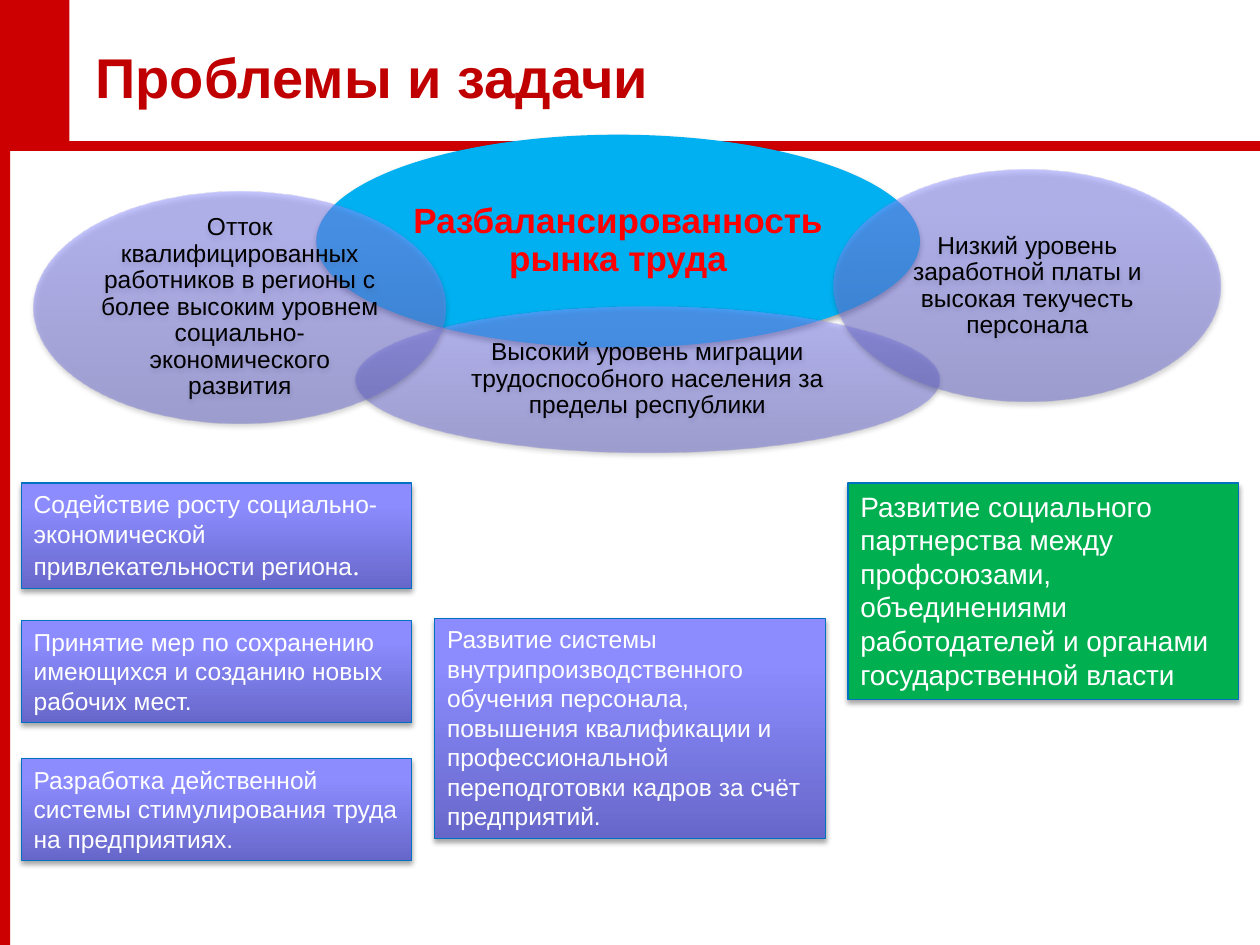
from lxml import etree
from pptx import Presentation
from pptx.dml.color import RGBColor
from pptx.enum import shapes, text
from pptx.oxml.ns import qn
from pptx.util import Pt

COLORS = {"frame": "CC0000", "title": "C00000", "blue": "00B0F0", "green": "00B050",
          "border": "0070C0", "alert": "FF0000", "dark": "000000", "light": "FFFFFF"}
VIOLET = [(0, "6767CA"), (80, "8C8CFF"), (100, "8E8EFF")]
FONT = "Arial"
TITLE = "Проблемы и задачи"

# Problems: text, (left, top, width, height), fill (None = violet), text colour, size, inset
PROBLEMS = [
    ("Разбалансированность рынка труда",
     (180.7, 77, 345, 121.7), "blue", "alert", 20, 2),
    ("Высокий уровень миграции трудоспособного населения за пределы республики",
     (203, 175, 334, 83.5), None, "dark", 14, 1.4),
    ("Низкий уровень заработной платы и высокая текучесть персонала",
     (476.6, 97.2, 221, 132.5), None, "dark", 14, 1.4),
    ("Отток квалифицированных работников в регионы с более высоким уровнем "
     "социально-экономического развития",
     (19.4, 109.4, 235.4, 132.5), None, "dark", 14, 1.4),
]

# Tasks: runs (text, font, size), column, top, height, fill (None = violet)
TASKS = [
    ([("Содействие росту социально-экономической привлекательности региона", FONT, 14),
      (".", "Times New Roman", 16)], 0, 276, 60.5, None),
    ([("Принятие мер по сохранению имеющихся и созданию новых рабочих мест.", FONT, 14)],
     0, 354.7, 58.2, None),
    ([("Разработка действенной системы стимулирования труда на предприятиях.", FONT, 14)],
     0, 433.5, 58.2, None),
    ([("Развитие системы внутрипроизводственного обучения персонала, повышения "
       "квалификации и профессиональной переподготовки кадров за счёт предприятий.", FONT, 14)],
     1, 353.3, 126, None),
    ([("Развитие социального партнерства между профсоюзами, объединениями "
       "работодателей и органами государственной власти", FONT, 16)],
     2, 276, 123.8, "green"),
]
TASK_LEFT, TASK_WIDTH, TASK_STEP = 12.2, 223.2, 236.2


def rgb(name):
    return RGBColor.from_string(COLORS[name])


def add_color(parent, value, alpha):
    color = etree.SubElement(parent, qn("a:srgbClr"), val=value)
    if alpha < 100:
        etree.SubElement(color, qn("a:alpha"), val=str(alpha * 1000))


def set_gradient(sp, alpha):
    grad = etree.Element(qn("a:gradFill"), rotWithShape="1")
    stops = etree.SubElement(grad, qn("a:gsLst"))
    for pos, value in VIOLET:
        add_color(etree.SubElement(stops, qn("a:gs"), pos=str(pos * 1000)), value, alpha)
    etree.SubElement(grad, qn("a:lin"), ang="16200000", scaled="0")
    sp._element.spPr.find(qn("a:prstGeom")).addnext(grad)


def set_shadow(sp):
    effects = sp._element.spPr.find(qn("a:effectLst"))
    shadow = etree.SubElement(effects, qn("a:outerShdw"), blurRad=str(Pt(3.1)),
                              dist=str(Pt(1.8)), dir="5400000", rotWithShape="0")
    add_color(shadow, COLORS["dark"], 35)


def add_block(slide, kind, box, fill, border=None, alpha=100):
    sp = slide.shapes.add_shape(kind, *map(Pt, box))
    sp.shadow.inherit = False
    if border:
        sp.line.color.rgb = rgb(border)
        sp.line.width = Pt(0.75)
    else:
        sp.line.fill.background()
    if fill:
        sp.fill.solid()
        sp.fill.fore_color.rgb = rgb(fill)
    else:
        set_gradient(sp, alpha)
    return sp


def style(font, size, color, name=FONT, bold=False):
    font.name, font.size, font.bold = name, Pt(size), bold
    font.color.rgb = rgb(color)


prs = Presentation()
prs.slide_width, prs.slide_height = Pt(720), Pt(540)
slide = prs.slides.add_slide(prs.slide_layouts[6])
RECT, OVAL = shapes.MSO_SHAPE.RECTANGLE, shapes.MSO_SHAPE.OVAL

# Red frame
add_block(slide, RECT, (0, 0, 5.8, 540), "frame")
rule = slide.shapes.add_connector(shapes.MSO_CONNECTOR.STRAIGHT,
                                  Pt(0), Pt(83.5), Pt(720), Pt(83.5))
rule.line.color.rgb = rgb("frame")
rule.line.width = Pt(6)
etree.SubElement(rule._element.spPr, qn("a:effectLst"))
add_block(slide, RECT, (0, 0, 39.6, 82), "frame")

# Title
tf = slide.shapes.add_textbox(Pt(47.5), Pt(9.4), Pt(594.7), Pt(67.7)).text_frame
tf.word_wrap = True
tf.vertical_anchor = text.MSO_ANCHOR.MIDDLE
p = tf.paragraphs[0]
p.text = TITLE
style(p.font, 32, "title", bold=True)

# Overlapping problem ellipses
for words, box, fill, color, size, inset in PROBLEMS:
    sp = add_block(slide, OVAL, box, fill, alpha=50)
    set_shadow(sp)
    tf = sp.text_frame
    tf.word_wrap = True
    tf.vertical_anchor = text.MSO_ANCHOR.MIDDLE
    tf.margin_left = tf.margin_right = tf.margin_top = tf.margin_bottom = Pt(inset)
    p = tf.paragraphs[0]
    p.text = words
    p.alignment = text.PP_ALIGN.CENTER
    p.line_spacing = 0.9
    style(p.font, size, color, bold=color == "alert")

# Task boxes in three columns
for runs, column, top, height, fill in TASKS:
    left = TASK_LEFT + column * TASK_STEP
    sp = add_block(slide, RECT, (left, top, TASK_WIDTH, height), fill, "border")
    set_shadow(sp)
    tf = sp.text_frame
    tf.word_wrap = True
    tf.auto_size = text.MSO_AUTO_SIZE.SHAPE_TO_FIT_TEXT
    tf.vertical_anchor = text.MSO_ANCHOR.TOP
    p = tf.paragraphs[0]
    p.alignment = text.PP_ALIGN.LEFT
    p.space_after = Pt(10)
    for words, name, size in runs:
        r = p.add_run()
        r.text = words
        style(r.font if len(runs) > 1 else p.font, size, "light", name)

prs.save("out.pptx")
